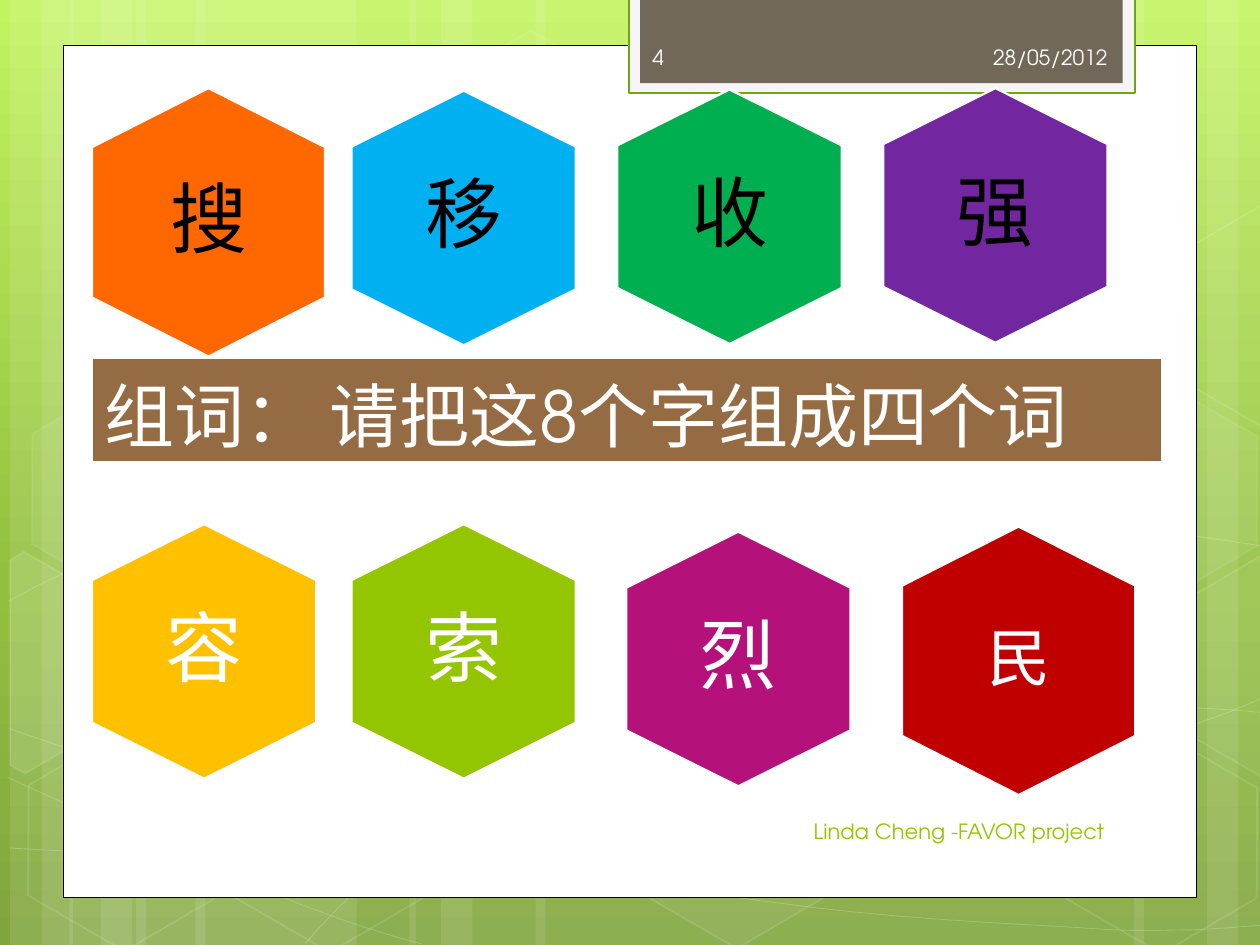
from copy import deepcopy

from lxml.etree import SubElement
from pptx import Presentation
from pptx.dml.color import RGBColor
from pptx.enum.shapes import MSO_SHAPE
from pptx.enum.text import MSO_ANCHOR, PP_ALIGN
from pptx.oxml.ns import qn
from pptx.util import Inches, Pt

WHITE = RGBColor(0xFF, 0xFF, 0xFF)
BLACK = RGBColor(0x00, 0x00, 0x00)
LIME = RGBColor(0x94, 0xC6, 0x00)
ORANGE = RGBColor(0xFF, 0x67, 0x00)
SKY = RGBColor(0x00, 0xB0, 0xF0)
GREEN = RGBColor(0x00, 0xB0, 0x50)
PURPLE = RGBColor(0x72, 0x26, 0xA0)
AMBER = RGBColor(0xFF, 0xC0, 0x00)
MAGENTA = RGBColor(0xB4, 0x12, 0x7A)
RED = RGBColor(0xC0, 0x00, 0x00)
BROWN = RGBColor(0x95, 0x6B, 0x43)
TAUPE = RGBColor(0x71, 0x68, 0x5A)
PALE = RGBColor(0xF5, 0xF5, 0xF5)
MOSS = RGBColor(0x74, 0xA5, 0x10)
NEAR_WHITE = RGBColor(0xFE, 0xFE, 0xFE)
BACKDROP = [(0, RGBColor(0xC3, 0xF3, 0x5F)), (0.62, RGBColor(0x93, 0xBF, 0x3F)),
            (1, RGBColor(0x81, 0xA5, 0x3E))]

FONT = "TeX Gyre Adventor"
COLUMNS, ROWS = 100, 75

STRIPES = [(10.8, 17.5), (0.8, 5), (3.3, 8.3), (15.5, 17.5), (5.5, 5), (8, 8.3),
           (73.3, 17.5), (95.8, 5), (90, 8.3), (42.5, 30.8), (32.5, 5), (35, 8.3)]
CURVES = [
    [(0.7, 67.3), (6.1, 67.6), (11.5, 67.9), (19, 67.8), (26.5, 67.7), (35.8, 67.5),
     (45.8, 66.5), (55.8, 65.5), (70, 63.6), (79.2, 61.7), (88.3, 59.8), (97.7, 56.8),
     (100.7, 55.1)],
    [(0.7, 47.7), (3.6, 46.1), (6.5, 44.6), (12.1, 43.1), (17.8, 41.6), (25.9, 39.4),
     (34.7, 38.7), (43.6, 38), (54.4, 37.9), (65.4, 38.7), (76.4, 39.5), (94.7, 42.6),
     (100.7, 43.4)],
    [(0.6, 61.7), (12.7, 67.2), (24.7, 72.7), (33.4, 74.9)],
    [(0.7, 57.8), (3.8, 58.9), (7, 60), (12.8, 61.6), (18.6, 63.1), (27.3, 65.6),
     (35.7, 67.3), (44, 69), (54.5, 70.8), (62.8, 71.8), (71.1, 72.9), (80, 73.3),
     (85.3, 73.6), (90.5, 74), (91.9, 73.8), (94.5, 73.8), (97.1, 73.7), (98.9, 73.5),
     (100.7, 73.4)],
    [(24.2, 74.9), (26, 72.9), (27.8, 70.9), (30.2, 69.1), (32.6, 67.3), (36, 65.3),
     (38.8, 63.9), (41.6, 62.5), (43.3, 61.9), (47, 60.9), (50.6, 59.9), (57.3, 58.5),
     (60.8, 57.8), (64.4, 57.1), (64.9, 57.1), (68, 56.9), (71.1, 56.6), (76, 56.3),
     (79.4, 56.2), (82.9, 56.1), (88.6, 56.2), (88.6, 56.2), (90.8, 56.2), (93.1, 56.2),
     (95.3, 56.2), (97.1, 56.3), (98.8, 56.4), (100.6, 56.6)],
]
GHOST_HEXAGONS = [(33.4, 3.6, 4, 8), (49.7, 58.9, 6, 12), (1.1, 59.1, 0, 12),
                  (1.4, 31.2, 7, 8), (17.4, 59.2, 0, 12), (75.3, 45.3, 10, 12),
                  (83.4, 59.3, 0, 12), (83.4, 31.4, 7, 8)]
CUT_HEXAGONS = [
    ([(0.8, 44.5), (1.9, 43.8), (9.6, 48.2), (9.5, 57), (2, 61.4), (0.8, 60.7)], 10),
    ([(92.6, 48.5), (100.1, 44.1), (100.9, 44.6), (100.9, 61.3), (100.2, 61.7),
      (92.6, 57.3)], 4),
    ([(92.6, 20.7), (100.1, 16.3), (101, 16.8), (100.9, 33.5), (100.2, 33.9),
      (92.6, 29.5)], 0),
]
SMALL, LARGE = (17.8, 20.2), (18.5, 21.3)
TILES = [
    ("移", 27.9, 7.2, SMALL, SKY, BLACK, 44),
    ("容", 7.3, 41.6, SMALL, AMBER, WHITE, 44),
    ("搜", 7.3, 7, LARGE, ORANGE, BLACK, 44),
    ("民", 71.6, 41.8, LARGE, RED, WHITE, 36),
    ("烈", 49.7, 42.2, SMALL, MAGENTA, WHITE, 44),
    ("索", 27.9, 41.6, SMALL, LIME, WHITE, 44),
    ("强", 70.1, 7, SMALL, PURPLE, BLACK, 44),
    ("收", 49, 7.1, SMALL, GREEN, BLACK, 44),
]
TILE_OUTLINE = [(0.5, 0), (1, 0.22), (1, 0.78), (0.5, 1), (0, 0.78), (0, 0.22)]


def write_text(frame, text, size=12, color=WHITE, align=PP_ALIGN.LEFT,
               anchor=MSO_ANCHOR.MIDDLE, spacing=None, after=None):
    frame.word_wrap = True
    frame.vertical_anchor = anchor
    paragraph = frame.paragraphs[0]
    paragraph.alignment = align
    paragraph.line_spacing = spacing
    paragraph.space_after = after
    run = paragraph.add_run()
    run.text = text
    run.font.name = FONT
    run.font.size = Pt(size)
    run.font.color.rgb = color


def fade(properties, tag, percent):
    for color in properties.find(qn(tag)).iter(qn("a:srgbClr")):
        SubElement(color, qn("a:alpha")).set("val", str(percent * 1000))


def trace_bezier(controls, steps=12):
    points = [controls[0]]
    for start in range(0, len(controls) - 1, 3):
        segment = controls[start:start + 4]
        for step in range(1, steps + 1):
            t = step / steps
            weights = ((1 - t) ** 3, 3 * t * (1 - t) ** 2, 3 * t ** 2 * (1 - t), t ** 3)
            points.append(tuple(sum(w * p[axis] for w, p in zip(weights, segment))
                                for axis in (0, 1)))
    return points


class SlideBuilder:
    def __init__(self, deck):
        self.column = deck.slide_width / COLUMNS
        self.row = deck.slide_height / ROWS
        self.slide = deck.slides.add_slide(deck.slide_layouts[6])
        self.shapes = self.slide.shapes

    def place(self, *lengths):
        units = (self.column, self.row) * 2
        return [round(length * unit) for length, unit in zip(lengths, units)]

    def backdrop(self, stops):
        fill = self.slide.background.fill
        fill.gradient()
        fill.gradient_angle = 270
        stop_list = self.slide.element.find(".//" + qn("a:gsLst"))
        stop_list.append(deepcopy(stop_list[0]))
        for stop, (position, color) in zip(fill.gradient_stops, stops):
            stop.position = position
            stop.color.rgb = color

    def paint(self, shape, fill=None, line=None, weight=1, fill_alpha=100, line_alpha=100):
        shape.shadow.inherit = False
        if fill is None:
            shape.fill.background()
        else:
            shape.fill.solid()
            shape.fill.fore_color.rgb = fill
            if fill_alpha < 100:
                fade(shape.element.spPr, "a:solidFill", fill_alpha)
        if line is None:
            shape.line.fill.background()
        else:
            shape.line.color.rgb = line
            shape.line.width = Pt(weight)
            if line_alpha < 100:
                fade(shape.element.spPr, "a:ln", line_alpha)
        return shape

    def box(self, left, top, width, height, kind=MSO_SHAPE.RECTANGLE, **style):
        shape = self.shapes.add_shape(kind, *self.place(left, top, width, height))
        return self.paint(shape, **style)

    def outline(self, points, close=True, **style):
        start, *rest = [self.place(*point) for point in points]
        builder = self.shapes.build_freeform(*start)
        builder.add_line_segments(rest, close=close)
        return self.paint(builder.convert_to_shape(), **style)

    def ghost_hexagon(self, left, top, **style):
        hexagon = self.box(left, top, 17.5, 15.2, kind=MSO_SHAPE.HEXAGON, **style)
        hexagon.adjustments[0] = 0.285
        hexagon.rotation = 30

    def tile(self, character, left, top, size, fill, ink, points):
        width, height = size
        corners = [(left + x * width, top + y * height) for x, y in TILE_OUTLINE]
        tile = self.outline(corners, fill=fill, line=WHITE, weight=1.25)
        write_text(tile.text_frame, character, size=points, color=ink,
                   align=PP_ALIGN.CENTER, spacing=0.9, after=Pt(0.35 * points))

    def label(self, text, left, top, width, **style):
        holder = self.shapes.add_textbox(*self.place(left, top, width, 4))
        write_text(holder.text_frame, text, **style)


def main():
    deck = Presentation()
    deck.slide_width, deck.slide_height = Inches(10), Inches(7.5)
    page = SlideBuilder(deck)
    page.backdrop(BACKDROP)

    for left, width in STRIPES:
        page.box(left, 0, width, ROWS, fill=WHITE, fill_alpha=10)
    for controls in CURVES:
        page.outline(trace_bezier(controls), close=False, line=WHITE, weight=0.5,
                     line_alpha=20)
    for left, top, tint, edge in GHOST_HEXAGONS:
        page.ghost_hexagon(left, top, fill=WHITE if tint else None, fill_alpha=tint,
                           line=WHITE, line_alpha=edge)
    for corners, tint in CUT_HEXAGONS:
        page.outline(corners, fill=WHITE if tint else None, fill_alpha=tint,
                     line=WHITE, line_alpha=12)

    page.box(5, 3.6, 90, 67.6, fill=WHITE, line=BLACK, weight=0.5)
    page.box(49.9, -0.2, 40.2, 7.6, fill=PALE, line=MOSS, weight=1.25)
    page.box(50.8, -0.2, 38.3, 6.8, fill=TAUPE)

    for tile in TILES:
        page.tile(*tile)

    banner = page.box(7.3, 28.4, 85, 8.3, fill=BROWN, line=WHITE, weight=1.75)
    write_text(banner.text_frame, "组词： 请把这8个字组成四个词", size=40,
               anchor=MSO_ANCHOR.BOTTOM)

    page.label("28/05/2012", 65.6, 2.5, 23.3, color=NEAR_WHITE, align=PP_ALIGN.RIGHT)
    page.label("Linda Cheng -FAVOR project ", 50.8, 64, 38.3, color=LIME,
               align=PP_ALIGN.RIGHT)
    page.label("4", 50.8, 2.5, 14.6, color=NEAR_WHITE)
    deck.save("out.pptx")


if __name__ == "__main__":
    main()
